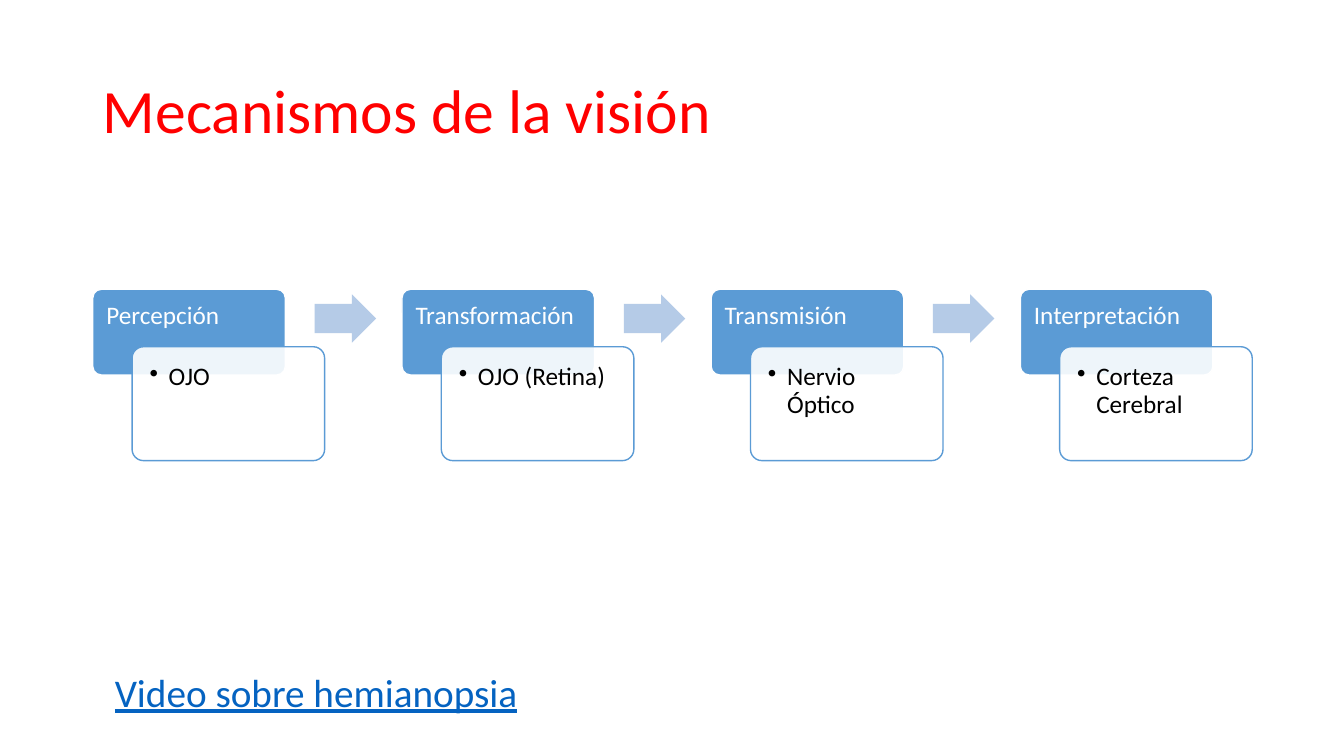
import pptx
import pptx.dml.color
import pptx.enum.shapes
import pptx.enum.text
import pptx.oxml
import pptx.oxml.ns
import pptx.util
from dataclasses import dataclass

Inches = pptx.util.Inches
Shapes = pptx.enum.shapes.MSO_SHAPE
Anchor = pptx.enum.text.MSO_ANCHOR


@dataclass(frozen=True)
class Theme:
    font: str = "Calibri"
    title: str = "FF0000"
    stage: str = "5B9BD5"
    arrow: str = "B5CBE7"
    white: str = "FFFFFF"
    black: str = "000000"
    link: str = "0563C1"
    title_size: int = 44
    link_size: int = 28
    stage_size: int = 18


THEME = Theme()

STAGES = [
    ("Percepción", "OJO"),
    ("Transformación", "OJO (Retina)"),
    ("Transmisión", "Nervio Óptico"),
    ("Interpretación", "Corteza Cerebral"),
]
FIRST_LEFT, LAST_LEFT, STAGE_TOP = 0.92, 10.12, 2.87
STAGE_PITCH = (LAST_LEFT - FIRST_LEFT) / (len(STAGES) - 1)


def rgb(color):
    return pptx.dml.color.RGBColor.from_string(color)


def write(frame, words, size, color, anchor=Anchor.TOP):
    """Put one left-aligned paragraph in the frame and return it."""
    frame.word_wrap = True
    frame.vertical_anchor = anchor
    paragraph = frame.paragraphs[0]
    paragraph.text = words
    paragraph.alignment = pptx.enum.text.PP_ALIGN.LEFT
    paragraph.font.name = THEME.font
    paragraph.font.size = pptx.util.Pt(size)
    paragraph.font.color.rgb = rgb(color)
    return paragraph


def indent(paragraph, margin, hanging=0, bullet=None):
    properties = paragraph._p.get_or_add_pPr()
    properties.set("marL", str(Inches(margin)))
    properties.set("indent", str(Inches(-hanging)))
    if bullet:
        mark = pptx.oxml.ns.qn("a:buChar")
        properties.append(properties.makeelement(mark, {"char": bullet}))


def add_filled_shape(slide, kind, box, fill, line=None, adjustments=(0.1,)):
    shape = slide.shapes.add_shape(kind, *map(Inches, box))
    shape.shadow.inherit = False
    for index, value in enumerate(adjustments):
        shape.adjustments[index] = value
    shape.fill.solid()
    shape.fill.fore_color.rgb = rgb(fill)
    if line:
        shape.line.color.rgb = rgb(line)
        shape.line.width = pptx.util.Pt(1)
    else:
        shape.line.fill.background()
    return shape


def set_opacity(shape, percent):
    color = shape.fill._xPr.find(".//" + pptx.oxml.ns.qn("a:srgbClr"))
    alpha = pptx.oxml.ns.qn("a:alpha")
    color.append(color.makeelement(alpha, {"val": str(percent * 1000)}))


def write_in_card(card, words, color, inset):
    frame = card.text_frame
    frame.margin_left = frame.margin_right = Inches(inset)
    frame.margin_top = frame.margin_bottom = Inches(inset)
    paragraph = write(frame, words, THEME.stage_size, color)
    paragraph.line_spacing = 0.9
    return paragraph


def add_stage(slide, left, name, place):
    # Heading card
    heading = add_filled_shape(slide, Shapes.ROUNDED_RECTANGLE,
                               (left, STAGE_TOP, 1.91, 0.85), THEME.stage, THEME.white)
    write_in_card(heading, name, THEME.white, 0.11)

    # Overlapping translucent card
    detail = add_filled_shape(slide, Shapes.ROUNDED_RECTANGLE,
                              (left + 0.39, STAGE_TOP + 0.57, 1.91, 1.13),
                              THEME.white, THEME.stage)
    set_opacity(detail, 90)
    indent(write_in_card(detail, place, THEME.black, 0.14), 0.19, 0.19, "•")


def add_arrow(slide, stage_left):
    add_filled_shape(slide, Shapes.RIGHT_ARROW,
                     (stage_left + 2.2, STAGE_TOP + 0.05, 0.61, 0.48),
                     THEME.arrow, adjustments=(0.6, 0.5))


def add_title(slide, words):
    title = slide.shapes.title
    title.left, title.top = Inches(0.92), Inches(0.4)
    title.width, title.height = Inches(11.5), Inches(1.45)
    paragraph = write(title.text_frame, words, THEME.title_size, THEME.title, Anchor.MIDDLE)
    paragraph.line_spacing = 0.9


def add_video_line(slide, words):
    video = slide.shapes.add_textbox(*map(Inches, (0.92, 6.58, 11.08, 0.57)))
    paragraph = write(video.text_frame, words, THEME.link_size, THEME.link)
    paragraph.font.underline = True
    paragraph.space_before = pptx.util.Pt(4)
    indent(paragraph, 0.12)


def main():
    deck = pptx.Presentation()
    deck.slide_width, deck.slide_height = Inches(13.33), Inches(7.5)
    slide = deck.slides.add_slide(deck.slide_layouts[5])

    add_title(slide, "Mecanismos de la visión")

    # Chain of stages, with an arrow between neighbours
    for index, (name, place) in enumerate(STAGES):
        left = FIRST_LEFT + index * STAGE_PITCH
        add_stage(slide, left, name, place)
        if index < len(STAGES) - 1:
            add_arrow(slide, left)

    add_video_line(slide, "Video sobre hemianopsia")
    deck.save("out.pptx")


if __name__ == "__main__":
    main()
